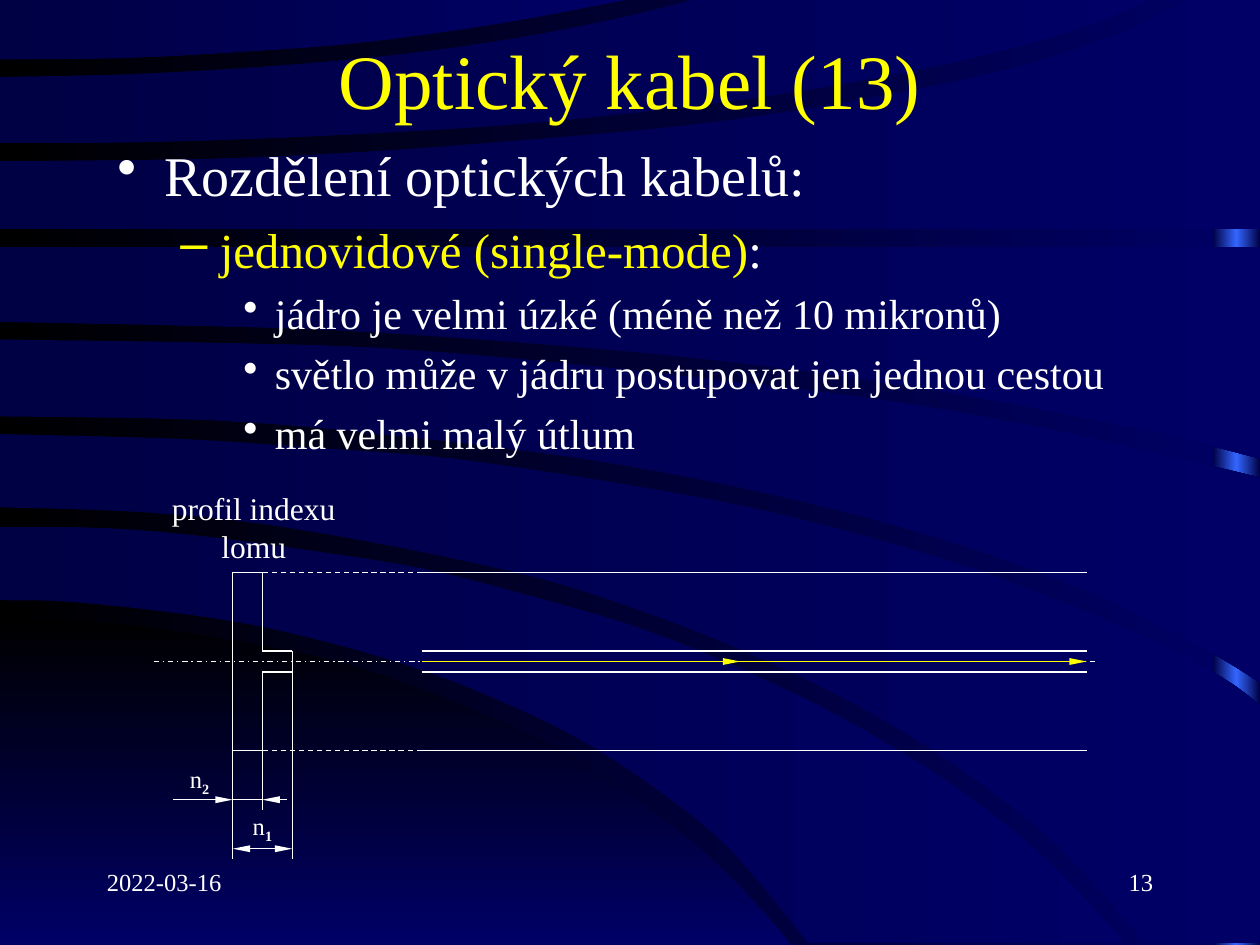
import copy

import pptx
import pptx.dml.color
import pptx.enum.dml
import pptx.enum.shapes
import pptx.enum.text
import pptx.oxml
import pptx.oxml.ns
import pptx.util

Pt = pptx.util.Pt
RGBColor = pptx.dml.color.RGBColor
ALIGN = pptx.enum.text.PP_ALIGN
ANCHOR = pptx.enum.text.MSO_ANCHOR
DASH = pptx.enum.dml.MSO_LINE

BLACK = RGBColor(0x00, 0x00, 0x00)
NAVY = RGBColor(0x00, 0x00, 0x66)
DARK_NAVY = RGBColor(0x00, 0x00, 0x44)
BLUE = RGBColor(0x33, 0x66, 0xFF)
WHITE = RGBColor(0xFF, 0xFF, 0xFF)
YELLOW = RGBColor(0xFF, 0xFF, 0x00)
FONT = "Times New Roman"

# Each band is a list of curves joined by straight edges
HILL = [[(-1, 354), (62, 356), (119, 364), (179, 375), (235, 392), (306, 422),
         (356, 451), (398, 483), (429, 513), (452, 540)], [(-1, 540)]]
BANDS = [
    [[(0, 301), (63, 302), (120, 307), (179, 315), (241, 325), (308, 342),
      (371, 361), (436, 388), (495, 418), (552, 454), (600, 493), (643, 539)],
     [(462, 539), (419, 487), (377, 452), (327, 420), (271, 394), (220, 376),
      (159, 360), (107, 351), (42, 344), (0, 343)]],
    [[(0, 248), (104, 251), (179, 256), (247, 261), (307, 269), (375, 280),
      (446, 294), (531, 317), (589, 337), (651, 362), (698, 387), (720, 403)],
     [(720, 539), (654, 539)],
     [(654, 539), (603, 482), (544, 436), (488, 402), (430, 374), (375, 352),
      (318, 333), (259, 319), (192, 306), (132, 297), (70, 292), (0, 290)]],
    [[(0, 194), (121, 196), (217, 199), (315, 207), (408, 217), (514, 230),
      (618, 249), (720, 273)],
     [(720, 390), (685, 369), (614, 335), (535, 307), (439, 282), (333, 262),
      (218, 248), (120, 240), (0, 238)]],
    [[(0, 141), (720, 141)],
     [(720, 262), (659, 247), (546, 225), (437, 209), (328, 198), (200, 189),
      (106, 186), (0, 184)]],
    [[(0, 92), (113, 91), (206, 87), (302, 80), (399, 71), (492, 57),
      (578, 39), (642, 18), (679, -1)], [(720, -1)], [(720, 131), (0, 131)]],
    [[(0, 44), (87, 42), (192, 35), (276, 25), (347, 12), (400, -1)],
     [(660, -1), (615, 17), (556, 33), (492, 46), (415, 58), (306, 70),
      (195, 77), (91, 81), (0, 82)]],
    [[(0, 34), (73, 33), (145, 29), (208, 24), (287, 13), (361, -1)], [(0, -1)]],
]


def smooth(pts, steps=4):
    """Catmull-Rom points along a curve."""
    if len(pts) < 3:
        return pts
    ends = [pts[0]] + pts + [pts[-1]]
    out = []
    for a, b, c, d in zip(ends, ends[1:], ends[2:], ends[3:]):
        for i in range(steps):
            t = i / steps
            out.append(tuple(
                q + t / 2 * (r - p + t * (2 * p - 5 * q + 4 * r - s + t * (3 * (q - r) + s - p)))
                for p, q, r, s in zip(a, b, c, d)))
    return out + [pts[-1]]


def set_gradient(fill, first, last, angle=0):
    fill.gradient()
    fill.gradient_angle = angle
    for stop, color, pos in zip(fill.gradient_stops, (first, last), (0, 1)):
        stop.color.rgb = color
        stop.position = pos


def finish(sp):
    sp.line.fill.background()
    sp.shadow.inherit = False


def add_background(slide, left, top, width, height):
    set_gradient(slide.background.fill, BLACK, NAVY)

    # Glowing strip on the right edge
    strip = 27
    sp = slide.shapes.add_shape(pptx.enum.shapes.MSO_SHAPE.RECTANGLE,
                                Pt(left + width - strip), Pt(top), Pt(strip), Pt(height))
    set_gradient(sp.fill, DARK_NAVY, BLUE)
    stops = sp.fill._fill._gradFill.gsLst
    end = copy.deepcopy(stops[0])
    end.set("pos", "100000")
    stops[1].set("pos", "50000")
    stops.append(end)
    finish(sp)

    # Sweeping bands
    for band in [HILL] + BANDS:
        pts = [(Pt(left + x), Pt(top + y)) for curve in band for x, y in smooth(curve)]
        fb = slide.shapes.build_freeform(*pts[0])
        fb.add_line_segments(pts[1:], close=True)
        sp = fb.convert_to_shape()
        if band is HILL:
            set_gradient(sp.fill, BLACK, NAVY, 270)
        else:
            set_gradient(sp.fill, DARK_NAVY, NAVY)
        finish(sp)


def style_run(r, size, color=WHITE):
    r.font.name = FONT
    r.font.size = Pt(size)
    r.font.color.rgb = color


def add_text(slide, left, top, width, height, text, size, color=WHITE,
             align=ALIGN.LEFT, anchor=ANCHOR.TOP, wrap=True, sub=""):
    tf = slide.shapes.add_textbox(Pt(left), Pt(top), Pt(width), Pt(height)).text_frame
    tf.word_wrap = wrap
    tf.vertical_anchor = anchor
    if not wrap:
        tf.margin_left = tf.margin_right = tf.margin_top = tf.margin_bottom = 0
    p = tf.paragraphs[0]
    p.text = text
    p.alignment = align
    for r in p.runs:
        style_run(r, size, color)
    if sub:
        r = p.add_run()
        r.text = sub
        style_run(r, size, color)
        r.font.bold = True
        r.font._element.set("baseline", "-25000")


def add_body(slide, left, top, width, height):
    levels = [(32, 27, 27, "•"), (28, 58.5, 22.5, "–"), (24, 90, 18, "•")]
    items = [
        (0, [("Rozdělení optických kabelů:", WHITE)]),
        (1, [("jednovidové (single-mode)", YELLOW), (":", WHITE)]),
        (2, [("jádro je velmi úzké (méně než 10 mikronů)", WHITE)]),
        (2, [("světlo může v jádru postupovat jen jednou cestou", WHITE)]),
        (2, [("má velmi malý útlum", WHITE)]),
    ]
    tf = slide.shapes.add_textbox(Pt(left), Pt(top), Pt(width), Pt(height)).text_frame
    tf.word_wrap = True
    for i, (level, parts) in enumerate(items):
        size, margin, hang, bullet = levels[level]
        p = tf.add_paragraph() if i else tf.paragraphs[0]
        p.level = level
        p.space_before = Pt(round(size * 0.23, 1))
        for text, color in parts:
            r = p.add_run()
            r.text = text
            style_run(r, size, color)
        pPr = p._p.get_or_add_pPr()
        pPr.set("marL", str(Pt(margin)))
        pPr.set("indent", str(-Pt(hang)))
        pptx.oxml.ns.qn("a:buChar")
        bu = pptx.oxml.parse_xml(f'<a:buChar {pptx.oxml.ns.nsdecls("a")} char="{bullet}"/>')
        pPr.append(bu)


def add_diagram(slide, left, top):
    """Refractive index profile and the fibre cross-section."""
    ns = pptx.oxml.ns.nsdecls("a")

    def line(x1, y1, x2, y2, color=WHITE, dash=None, arrows=()):
        cn = slide.shapes.add_connector(pptx.enum.shapes.MSO_CONNECTOR.STRAIGHT,
                                        Pt(left + x1), Pt(top + y1), Pt(left + x2), Pt(top + y2))
        cn.line.color.rgb = color
        cn.line.width = Pt(0.75)
        if dash:
            cn.line.dash_style = dash
        for end in arrows:
            cn.line._get_or_add_ln().append(pptx.oxml.parse_xml(
                f'<a:{end} {ns} type="triangle" w="sm" len="lg"/>'))
        cn._element.spPr.append(pptx.oxml.parse_xml(f"<a:effectLst {ns}/>"))

    base, clad, core, fibre, mid, end = 45, 62, 79, 153, 335, 533
    clad_top, core_top, axis, core_bottom, clad_bottom = 46, 91, 97, 103, 148
    dim_clad, dim_core = 176, 204

    # Fibre walls
    for y in (core_top, core_bottom, clad_top, clad_bottom):
        line(fibre, y, end, y)

    # Index profile, mirrored about the axis
    line(base, clad_top, base, clad_bottom)
    for outer, inner in ((clad_top, core_top), (clad_bottom, core_bottom)):
        line(base, outer, clad, outer)
        line(clad, outer, clad, inner)
        line(clad, inner, core, inner)
        line(fibre, outer, clad, outer, dash=DASH.DASH)
    line(core, core_top, core, core_bottom)
    line(0, axis, 538, axis, dash=DASH.DASH_DOT)

    # Dimensions
    line(base, clad_bottom, base, dim_core + 6)
    line(clad, clad_bottom, clad, dim_clad + 6)
    line(core, core_bottom, core, dim_core + 6)
    line(11, dim_clad, base, dim_clad, arrows=["tailEnd"])
    line(76, dim_clad, clad, dim_clad, arrows=["tailEnd"])
    line(clad, dim_clad, base, dim_clad)
    line(base, dim_core, core, dim_core, arrows=["headEnd", "tailEnd"])

    # Light ray
    for x1, x2 in ((fibre, mid), (mid, end)):
        line(x1, axis, x2, axis, YELLOW, arrows=["tailEnd"])

    # Labels
    for x, y, w, h, text, size, sub in ((0, 0, 114, 40, "profil indexu\vlomu", 18, ""),
                                        (17, 156, 18, 18, "n", 14, "2"),
                                        (51, 183, 22, 18, "n", 14, "1")):
        add_text(slide, left + x, top + y, w, h, text, size, align=ALIGN.CENTER,
                 anchor=ANCHOR.MIDDLE, wrap=False, sub=sub)


def main():
    prs = pptx.Presentation()
    prs.slide_width, prs.slide_height = Pt(720), Pt(540)
    slide = prs.slides.add_slide(prs.slide_layouts[6])
    add_background(slide, 0, 0, 720, 540)
    add_text(slide, 54, 492, 150, 36, "2022-03-16", 14)
    add_text(slide, 516, 492, 150, 36, "13", 14, align=ALIGN.RIGHT)
    add_text(slide, 54, 15, 612, 60.5, "Optický kabel (13)", 44, YELLOW,
             ALIGN.CENTER, ANCHOR.MIDDLE)
    add_body(slide, 60, 77, 612, 193)
    add_diagram(slide, 88, 281)
    prs.save("out.pptx")


if __name__ == "__main__":
    main()
